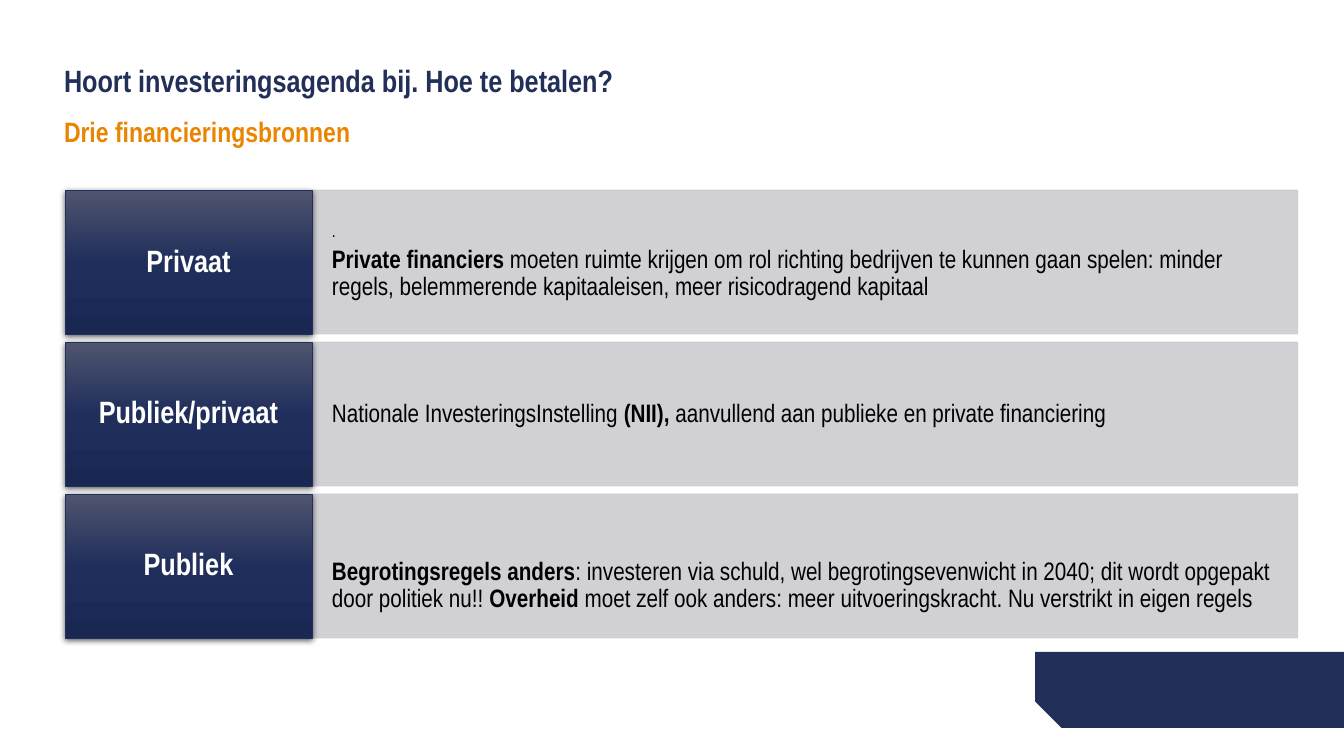
"""Build the slide on three sources of financing for the investment agenda."""
from lxml import etree
from pptx import Presentation
from pptx.dml.color import RGBColor
from pptx.enum.shapes import MSO_SHAPE
from pptx.enum.text import MSO_ANCHOR, PP_ALIGN
from pptx.oxml import parse_xml
from pptx.oxml.ns import nsdecls, qn
from pptx.util import Emu, Pt

RECTANGLE, SNIPPED = MSO_SHAPE.RECTANGLE, MSO_SHAPE.SNIP_1_RECTANGLE
TOP, MIDDLE, BOTTOM = MSO_ANCHOR.TOP, MSO_ANCHOR.MIDDLE, MSO_ANCHOR.BOTTOM
LEFT, CENTER = PP_ALIGN.LEFT, PP_ALIGN.CENTER

NAVY = RGBColor(0x22, 0x2F, 0x58)
ORANGE = RGBColor(0xE9, 0x85, 0x00)
GREY = RGBColor(0xCD, 0xCD, 0xD1)
BLACK = RGBColor(0, 0, 0)
WHITE = RGBColor(255, 255, 255)
LABEL_GRADIENT = [
    (0, RGBColor(0x50, 0x55, 0x6F)),
    (50, RGBColor(0x1F, 0x2E, 0x5B)),
    (100, RGBColor(0x19, 0x27, 0x53)),
]
FONT = "Arial Narrow"

TITLE = "Hoort investeringsagenda bij. Hoe te betalen?"
SUBTITLE = "Drie financieringsbronnen"

# Each source: label, top and bottom inset, paragraphs of (size, [(text, bold)])
SOURCES = [
    ("Privaat", (36, 36), [
        (12, [(".", False)]),
        (18, [
            ("Private financiers ", True),
            ("moeten ruimte krijgen om rol richting bedrijven te kunnen gaan spelen: "
             "minder regels, belemmerende kapitaaleisen, meer risicodragend kapitaal", False),
        ]),
    ]),
    ("Publiek/privaat", (36, 36), [
        (18, [
            ("Nationale InvesteringsInstelling ", False),
            ("(NII), ", True),
            ("aanvullend aan publieke en private financiering", False),
        ]),
    ]),
    ("Publiek", (50, 10), [
        (18, [
            ("Begrotingsregels anders", True),
            (": investeren via schuld, wel begrotingsevenwicht in 2040; "
             "dit wordt opgepakt door politiek nu!! ", False),
            ("Overheid ", True),
            ("moet zelf ook anders: meer uitvoeringskracht. Nu verstrikt in eigen regels", False),
        ]),
    ]),
]

ROW_TOP, ROW_STEP, ROW_HEIGHT = 190, 152, 144
LABEL_LEFT, LABEL_WIDTH = 65, 247
DESCRIPTION_LEFT, DESCRIPTION_WIDTH = 313, 985


def px(length):
    return Emu(round(length * 914400 / 100.8))


def write_text(shape, paragraphs, color, anchor, alignment, insets):
    frame = shape.text_frame
    frame.word_wrap = True
    frame.vertical_anchor = anchor
    frame.margin_left, frame.margin_top, frame.margin_right, frame.margin_bottom = map(px, insets)
    for index, (size, runs) in enumerate(paragraphs):
        paragraph = frame.add_paragraph() if index else frame.paragraphs[0]
        paragraph.alignment = alignment
        paragraph.line_spacing = 0.9
        if index < len(paragraphs) - 1:
            paragraph.space_after = Pt(4)
        for text, bold in runs:
            run = paragraph.add_run()
            run.text = text
            run.font.name = FONT
            run.font.size = Pt(size)
            run.font.bold = bold
            run.font.color.rgb = color


def add_heading(slide, text, size, color, box, anchor):
    heading = slide.shapes.add_textbox(*map(px, box))
    write_text(heading, [(size, [(text, True)])], color, anchor, LEFT, (0, 0, 20, 0))


def add_block(slide, kind, box, fill, line):
    shape = slide.shapes.add_shape(kind, *map(px, box))
    shape.shadow.inherit = False
    shape.fill.solid()
    shape.fill.fore_color.rgb = fill
    shape.line.color.rgb = line
    shape.line.width = Pt(0.5)
    return shape


def style_label(shape):
    properties = shape._element.spPr
    stops = "".join(
        f'<a:gs pos="{position * 1000}"><a:srgbClr val="{color}"/></a:gs>'
        for position, color in LABEL_GRADIENT
    )
    gradient = parse_xml(
        f'<a:gradFill {nsdecls("a")} rotWithShape="1"><a:gsLst>{stops}</a:gsLst>'
        '<a:lin ang="5400000" scaled="0"/></a:gradFill>'
    )
    properties.replace(properties.find(qn("a:solidFill")), gradient)
    properties.find(qn("a:effectLst")).append(parse_xml(
        f'<a:outerShdw {nsdecls("a")} blurRad="57150" dist="19050" dir="5400000" '
        'algn="ctr" rotWithShape="0"><a:srgbClr val="000000"><a:alpha val="63000"/>'
        '</a:srgbClr></a:outerShdw>'
    ))


def add_source(slide, top, label, vertical_insets, paragraphs):
    description = add_block(
        slide, RECTANGLE, (DESCRIPTION_LEFT, top, DESCRIPTION_WIDTH, ROW_HEIGHT), GREY, GREY)
    for color in description._element.spPr.iter(qn("a:srgbClr")):
        etree.SubElement(color, qn("a:alpha")).set("val", "90000")
    inset_top, inset_bottom = vertical_insets
    write_text(description, paragraphs, BLACK, MIDDLE, LEFT, (19, inset_top, 19, inset_bottom))

    name = add_block(slide, RECTANGLE, (LABEL_LEFT, top, LABEL_WIDTH, ROW_HEIGHT), NAVY, NAVY)
    style_label(name)
    write_text(name, [(22, [(label, True)])], WHITE, MIDDLE, CENTER, (13, 14, 13, 14))


def main():
    presentation = Presentation()
    presentation.slide_width, presentation.slide_height = px(1344), px(756)
    slide = presentation.slides.add_slide(presentation.slide_layouts[6])

    corner = add_block(slide, SNIPPED, (1035, 652, 309, 76), NAVY, NAVY)
    corner.line.fill.background()
    corner.rotation = 180
    corner.adjustments[0] = 0.35

    add_heading(slide, TITLE, 22, NAVY, (64, 28, 824, 71), BOTTOM)
    add_heading(slide, SUBTITLE, 20, ORANGE, (64, 118, 530, 45), TOP)
    for index, source in enumerate(SOURCES):
        add_source(slide, ROW_TOP + index * ROW_STEP, *source)

    presentation.save("out.pptx")


if __name__ == "__main__":
    main()
